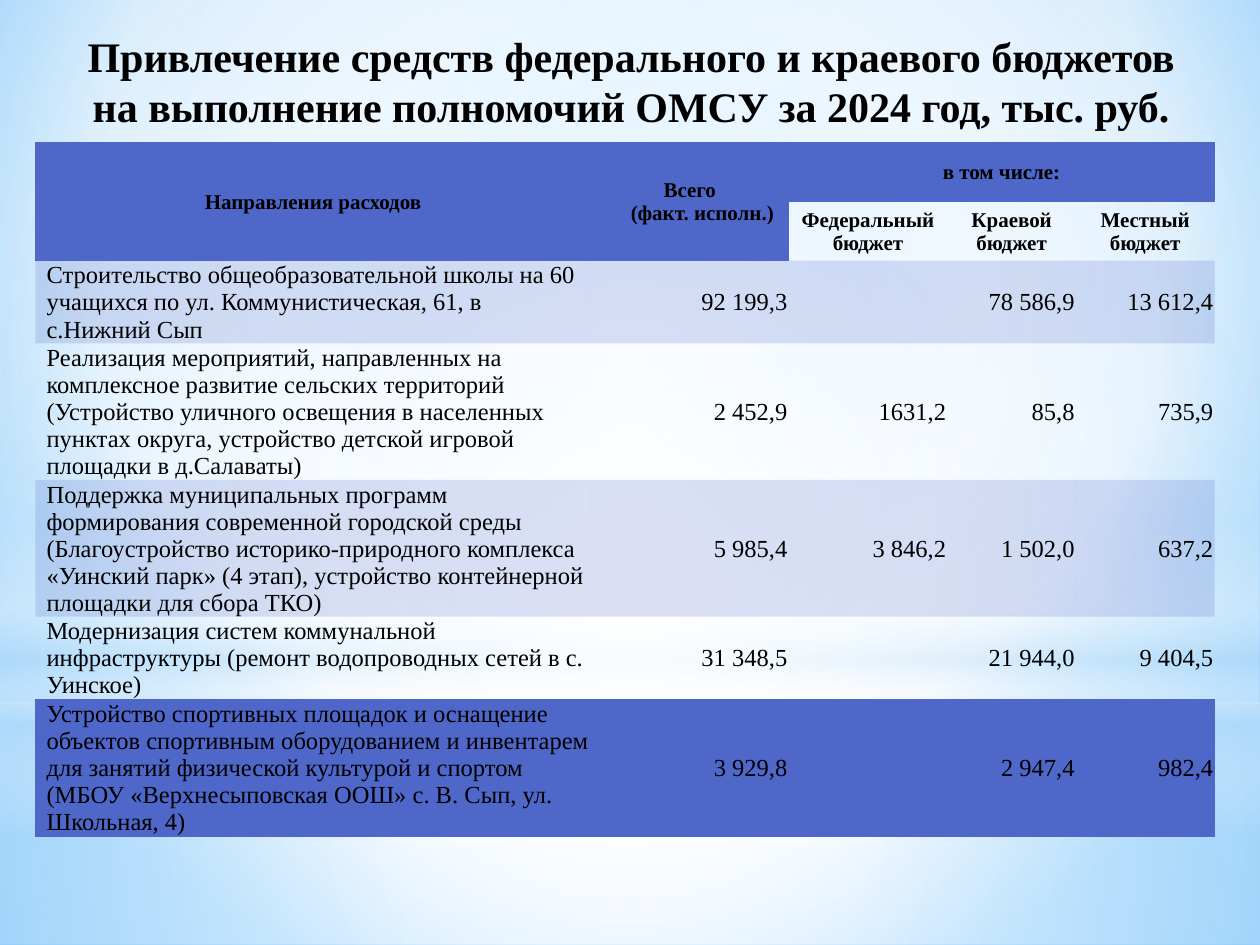
import pptx
import pptx.dml.color
import pptx.enum.shapes
import pptx.enum.text
import pptx.oxml.ns
import pptx.util
import lxml.etree

Inches = pptx.util.Inches
Pt = pptx.util.Pt
qn = pptx.oxml.ns.qn
ALIGN = pptx.enum.text.PP_ALIGN
MIDDLE = pptx.enum.text.MSO_ANCHOR.MIDDLE
SHAPE = pptx.enum.shapes.MSO_SHAPE

ACCENT = "4E67C8"
NO_STYLE = "{2D5ABB26-0587-4C30-8999-92F81FD0307C}"
TITLE = ("Привлечение средств федерального и краевого бюджетов "
         "на выполнение полномочий ОМСУ за 2024 год, тыс. руб.")

# position, colour, opacity in percent
BACKDROP = [(0, "9ED5FF", 100), (69, "FFFFFF", 100), (100, "5BB9FF", 100)]
CENTRE = (50, 50, 50, 50)
GLOWS = [
    (SHAPE.RECTANGLE, (0, 5.58, 10, 1.92),
     [(0, "FFFFFF", 91), (37, "FFFFFF", 76), (100, "B4DCFA", 79)], CENTRE),
    (SHAPE.RECTANGLE, (0, 0, 10, 5.58),
     [(0, "FFFFFF", 89), (48, "FFFFFF", 62), (100, "B4DCFA", 79)], CENTRE),
    (SHAPE.RECTANGLE, (0, 4.12, 10, 2.5),
     [(0, "FFFFFF", 0), (29, "FFFFFF", 30), (45, "B4DCFA", 40),
      (55, "FFFFFF", 26), (65, "B4DCFA", 60), (100, "FFFFFF", 0)], None),
    (SHAPE.OVAL, (0, 1.75, 10, 5.58),
     [(0, "FFFFFF", 100), (56, "FFFFFF", 0)], CENTRE),
]

COL_WIDTHS = [4.41, 1.57, 1.26, 1.02, 1.1]
ROW_HEIGHTS = [0.47, 0.47, 0.65, 1.08, 1.08, 0.65, 1.08]
HEADERS = {
    (0, 0): "Направления расходов",
    (0, 1): "Всего\n(факт. исполн.)",
    (0, 2): "в том числе:",
    (1, 2): "Федеральный бюджет",
    (1, 3): "Краевой бюджет",
    (1, 4): "Местный бюджет",
}
MERGES = [((0, 0), (1, 0)), ((0, 1), (1, 1)), ((0, 2), (0, 4))]
EXPENSES = [
    ("Строительство общеобразовательной школы на 60 учащихся по ул. "
     "Коммунистическая, 61, в с.Нижний Сып",
     "92 199,3", "", "78 586,9", "13 612,4"),
    ("Реализация мероприятий, направленных на комплексное развитие сельских "
     "территорий (Устройство уличного освещения в населенных пунктах округа, "
     "устройство детской игровой площадки в д.Салаваты)",
     "2 452,9", "1631,2", "85,8", "735,9"),
    ("Поддержка муниципальных программ формирования современной городской "
     "среды (Благоустройство историко-природного комплекса «Уинский парк» "
     "(4 этап), устройство контейнерной площадки для сбора ТКО)",
     "5 985,4", "3 846,2", "1 502,0", "637,2"),
    ("Модернизация систем коммунальной инфраструктуры (ремонт водопроводных "
     "сетей в с. Уинское)",
     "31 348,5", "", "21 944,0", "9 404,5"),
    ("Устройство спортивных площадок и оснащение объектов спортивным "
     "оборудованием и инвентарем для занятий физической культурой и спортом "
     "(МБОУ «Верхнесыповская ООШ» с. В. Сып, ул. Школьная, 4)",
     "3 929,8", "", "2 947,4", "982,4"),
]


def rgb(value):
    return pptx.dml.color.RGBColor.from_string(value)


def set_attrs(obj, values):
    for name, value in values.items():
        setattr(obj, name, value)


def child(parent, tag, **attrs):
    el = lxml.etree.SubElement(parent, qn(tag))
    for name, value in attrs.items():
        el.set(name, str(value))
    return el


def set_gradient(fill, owner, stops, focus):
    """Circular gradient towards focus (l, t, r, b in percent); vertical if None."""
    fill.gradient()
    grad = owner.find(".//" + qn("a:gradFill"))
    for el in list(grad):
        grad.remove(el)
    stop_list = child(grad, "a:gsLst")
    for pos, color, opacity in stops:
        stop = child(stop_list, "a:gs", pos=pos * 1000)
        clr = child(stop, "a:srgbClr", val=color)
        if opacity < 100:
            child(clr, "a:alpha", val=opacity * 1000)
    if focus is None:
        child(grad, "a:lin", ang=90 * 60000, scaled=0)
    else:
        circle = child(grad, "a:path", path="circle")
        sides = {side: n * 1000 for side, n in zip("ltrb", focus)}
        child(circle, "a:fillToRect", **sides)


def add_glow(slide, kind, box, stops, focus):
    sp = slide.shapes.add_shape(kind, *map(Inches, box))
    sp.shadow.inherit = False
    sp.line.fill.background()
    set_gradient(sp.fill, sp._element, stops, focus)


def write(tf, text, size, bold, align):
    tf.text = text
    for p in tf.paragraphs:
        p.alignment = align
        for r in p.runs:
            set_attrs(r.font, {"name": "Times New Roman", "size": Pt(size), "bold": bold})
            r.font.color.rgb = rgb("000000")


def add_title(slide):
    sp = slide.shapes.title
    set_attrs(sp, {"left": Inches(0.51), "top": Inches(0.13),
                   "width": Inches(9), "height": Inches(1.02)})
    set_attrs(sp.text_frame, {"word_wrap": True, "vertical_anchor": MIDDLE})
    write(sp.text_frame, TITLE, 24, True, ALIGN.CENTER)
    slide.shapes._spTree.append(sp._element)  # bring in front of the glows


def set_border(cell, side):
    ln = child(cell._tc.get_or_add_tcPr(), side, w=Pt(1))
    child(child(ln, "a:solidFill"), "a:srgbClr", val=ACCENT)


def tint(cell):
    cell.fill.solid()
    cell.fill.fore_color.rgb = rgb(ACCENT)
    child(cell._tc.tcPr.find(".//" + qn("a:srgbClr")), "a:alpha", val=20000)


def format_cell(cell, row):
    set_attrs(cell, {"vertical_anchor": MIDDLE, "margin_left": Inches(0.01),
                     "margin_right": Inches(0.01), "margin_top": Inches(0.01),
                     "margin_bottom": 0})
    if row == 0:
        set_border(cell, "a:lnT")
    if row == len(ROW_HEIGHTS) - 1:
        set_border(cell, "a:lnB")
    if row % 2 == 0:
        tint(cell)
    else:
        cell.fill.background()


def add_expense_table(slide):
    frame = slide.shapes.add_table(
        len(ROW_HEIGHTS), len(COL_WIDTHS), Inches(0.28), Inches(1.13),
        Inches(sum(COL_WIDTHS)), Inches(sum(ROW_HEIGHTS)))
    table = frame.table
    table._tbl.tblPr.find(qn("a:tableStyleId")).text = NO_STYLE
    for col, width in zip(table.columns, COL_WIDTHS):
        col.width = Inches(width)
    for i, height in enumerate(ROW_HEIGHTS):
        table.rows[i].height = Inches(height)
        for cell in table.rows[i].cells:
            format_cell(cell, i)
    for first, last in MERGES:
        table.cell(*first).merge(table.cell(*last))
    for place, text in HEADERS.items():
        write(table.cell(*place).text_frame, text, 12, True, ALIGN.CENTER)
    table.cell(0, 1).text_frame.paragraphs[1]._p.get_or_add_pPr().set("marL", str(Inches(0.2)))
    for i, (name, *amounts) in enumerate(EXPENSES, 2):
        cell = table.cell(i, 0)
        write(cell.text_frame, name, 14, False, ALIGN.LEFT)
        cell.text_frame.paragraphs[0]._p.get_or_add_pPr().set("marL", str(Inches(0.08)))
        for j, amount in enumerate(amounts, 1):
            write(table.cell(i, j).text_frame, amount, 14, False, ALIGN.RIGHT)


def main():
    prs = pptx.Presentation()
    set_attrs(prs, {"slide_width": Inches(10), "slide_height": Inches(7.5)})
    slide = prs.slides.add_slide(prs.slide_layouts[5])
    set_gradient(slide.background.fill, slide.element, BACKDROP, (20, 10, 20, 60))
    for glow in GLOWS:
        add_glow(slide, *glow)
    add_title(slide)
    add_expense_table(slide)
    prs.save("out.pptx")


if __name__ == "__main__":
    main()
